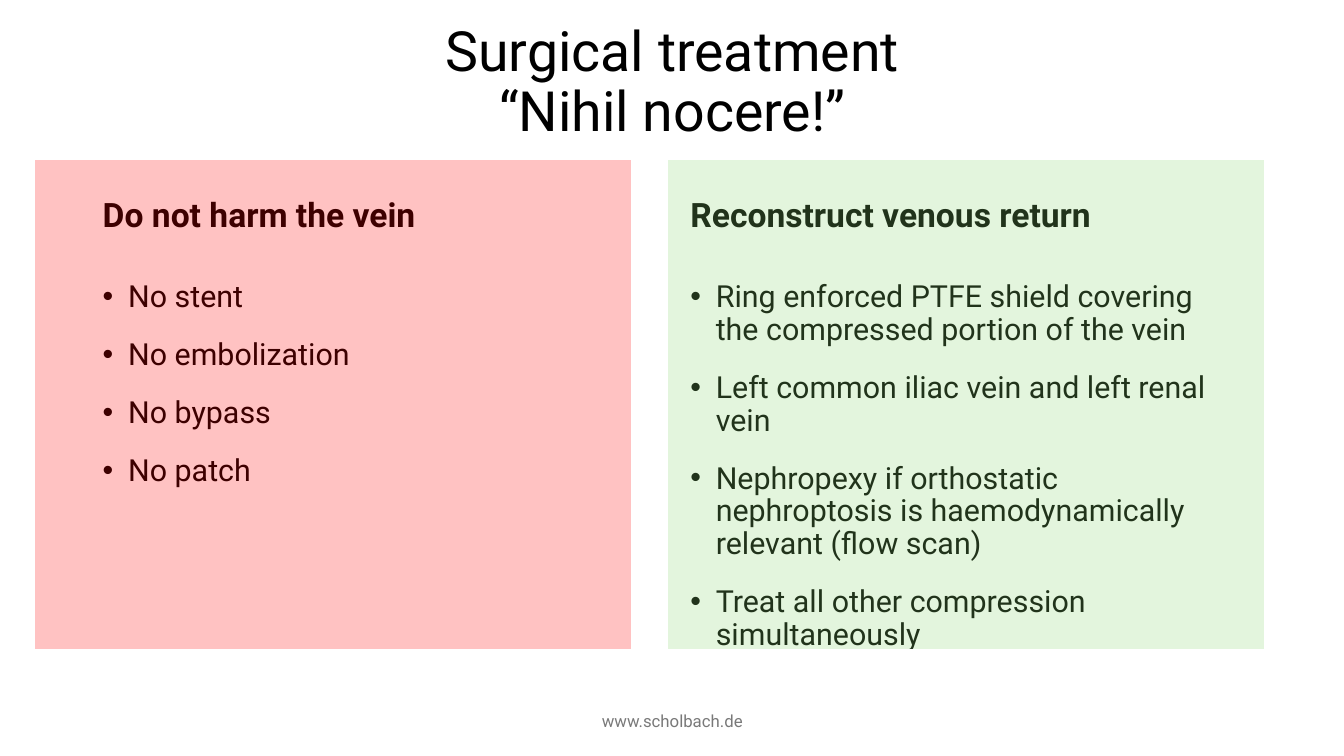
import pptx
import pptx.dml.color
import pptx.enum.shapes
import pptx.enum.text
import pptx.oxml
import pptx.oxml.ns
import pptx.util

Cm = pptx.util.Cm
Pt = pptx.util.Pt
RGBColor = pptx.dml.color.RGBColor
Align = pptx.enum.text.PP_ALIGN
Anchor = pptx.enum.text.MSO_ANCHOR

BLACK = RGBColor(0x00, 0x00, 0x00)
WHITE = RGBColor(0xFF, 0xFF, 0xFF)
GREY = RGBColor(0x79, 0x79, 0x79)
RED = RGBColor(0xFF, 0x00, 0x00)
GREEN = RGBColor(0x8E, 0xD9, 0x73)

COLUMNS = [
    {
        "text_left": 2.34, "text_width": 14.33, "panel_left": 0.84, "tint": RED,
        "heading": "Do not harm the vein",
        "points": ["No stent", "No embolization", "No bypass", "No patch"],
    },
    {
        "text_left": 17.15, "text_width": 14.4, "panel_left": 16.79, "tint": GREEN,
        "heading": "Reconstruct venous return",
        "points": [
            "Ring enforced PTFE shield covering the compressed portion of the vein",
            "Left common iliac vein and left renal vein",
            "Nephropexy if orthostatic nephroptosis is haemodynamically relevant (flow scan)",
            "Treat all other compression simultaneously",
        ],
    },
]


def apply(target, values):
    for name, value in values.items():
        setattr(target, name, value)


class SlideBuilder:
    font_name = "Roboto"

    def __init__(self, slide):
        self.slide = slide

    def text(self, box, lines, font, paragraph_format, anchor, bulleted=False):
        frame = self.slide.shapes.add_textbox(*map(Cm, box)).text_frame
        apply(frame, {"word_wrap": True, "vertical_anchor": anchor})
        for index, line in enumerate(lines):
            paragraph = frame.add_paragraph() if index else frame.paragraphs[0]
            paragraph.text = line
            if bulleted:
                self.bullet(paragraph)
            apply(paragraph, paragraph_format)
            if index:
                paragraph.space_before = Pt(10)
            for run in paragraph.runs:
                apply(run.font, {"name": self.font_name, **font})
                run.font.color.rgb = font_color(font)

    def bullet(self, paragraph):
        properties = paragraph._p.get_or_add_pPr()
        properties.set("marL", str(Cm(0.64)))
        properties.set("indent", str(-Cm(0.64)))
        font = pptx.oxml.parse_xml(
            f'<a:buFont {pptx.oxml.ns.nsdecls("a")} typeface="Arial"/>')
        mark = pptx.oxml.parse_xml(
            f'<a:buChar {pptx.oxml.ns.nsdecls("a")} char="•"/>')
        properties.extend([font, mark])

    def panel(self, left, tint):
        panel = self.slide.shapes.add_shape(
            pptx.enum.shapes.MSO_SHAPE.RECTANGLE,
            Cm(left), Cm(3.99), Cm(15.11), Cm(12.42))
        panel.shadow.inherit = False
        panel.fill.solid()
        panel.fill.fore_color.rgb = tint
        color = panel._element.spPr.find(
            f'{pptx.oxml.ns.qn("a:solidFill")}/{pptx.oxml.ns.qn("a:srgbClr")}')
        color.append(pptx.oxml.parse_xml(
            f'<a:alpha {pptx.oxml.ns.nsdecls("a")} val="24000"/>'))
        panel.line.color.rgb = WHITE
        panel.line.width = Pt(3)


def font_color(font):
    return GREY if font["size"] == Pt(12) else BLACK


def main():
    deck = pptx.Presentation()
    apply(deck, {"slide_width": Cm(33.87), "slide_height": Cm(19.05)})
    builder = SlideBuilder(deck.slides.add_slide(deck.slide_layouts[6]))

    builder.text((2.34, 0.64, 29.21, 2.95), ["Surgical treatment\n“Nihil nocere!”"],
                 {"size": Pt(39.6)}, {"alignment": Align.CENTER, "line_spacing": 0.9},
                 Anchor.MIDDLE)
    for column in COLUMNS:
        left, width = column["text_left"], column["text_width"]
        builder.text((left, 4.67, width, 1.37), [column["heading"]],
                     {"size": Pt(24), "bold": True}, {"line_spacing": 0.9}, Anchor.BOTTOM)
        builder.text((left, 6.96, width, 10.24), column["points"], {"size": Pt(21.7)},
                     {"line_spacing": 0.9, "space_after": Pt(8)}, Anchor.TOP, bulleted=True)
    builder.text((11.23, 17.65, 11.43, 1.02), ["www.scholbach.de"], {"size": Pt(12)},
                 {"alignment": Align.CENTER}, Anchor.MIDDLE)
    for column in COLUMNS:
        builder.panel(column["panel_left"], column["tint"])

    deck.save("out.pptx")


if __name__ == "__main__":
    main()
